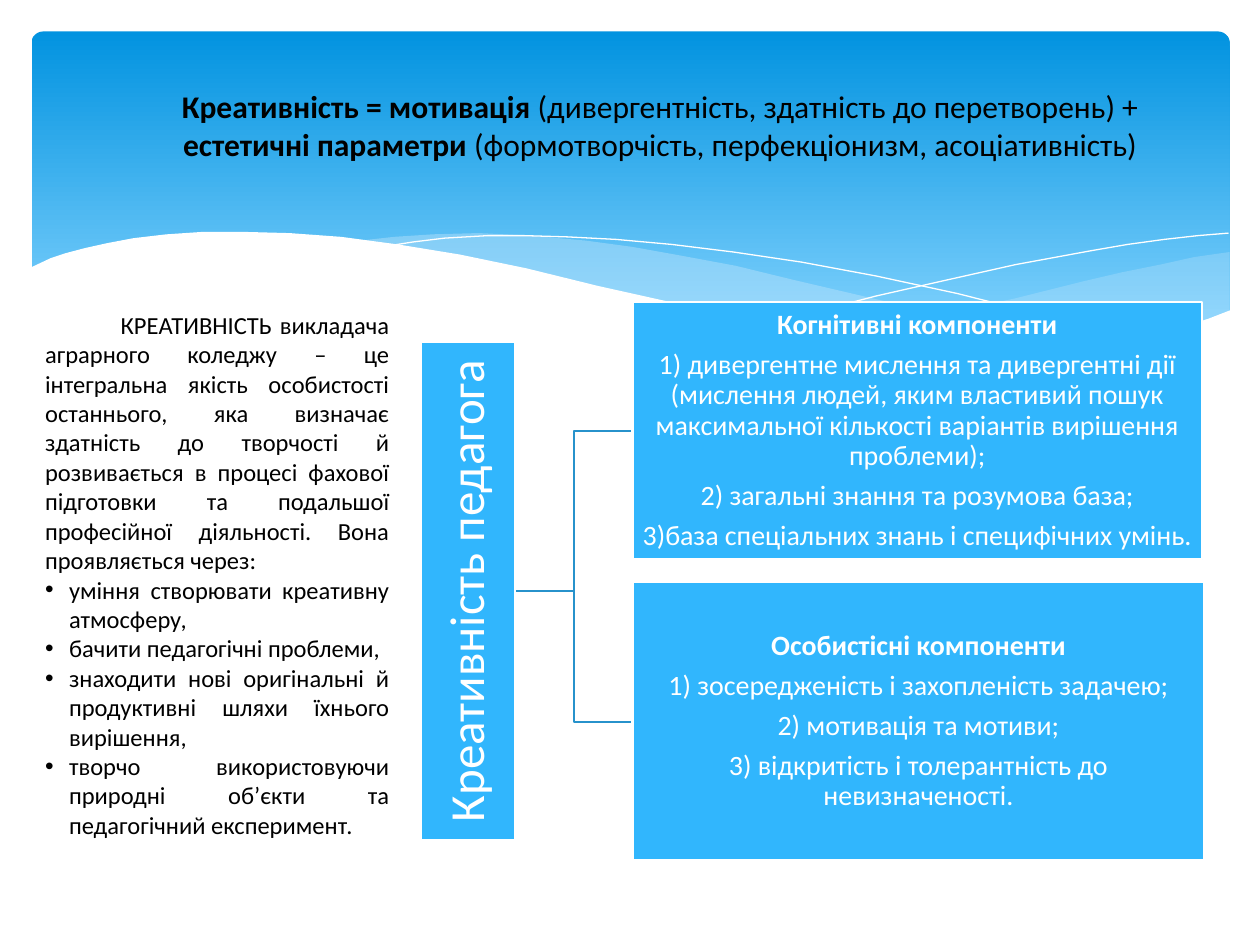
import pptx
import pptx.util
import pptx.dml.color
import pptx.enum.shapes
import pptx.enum.text
import pptx.oxml.ns
import lxml.etree
from dataclasses import dataclass

COLS, ROWS = 10, 7.5
ALIGN = pptx.enum.text.PP_ALIGN
ANCHOR = pptx.enum.text.MSO_ANCHOR
SHAPE = pptx.enum.shapes.MSO_SHAPE


@dataclass(frozen=True)
class Theme:
    """Colours, type sizes and font of the slide."""
    font: str = "Calibri"
    ink: str = "000000"
    white: str = "FFFFFF"
    panel: str = "31B6FD"
    link: str = "2792CB"
    deep: str = "0293E0"
    light: str = "83D3FE"
    mist: str = "C6E7FC"
    head: float = 18
    body: float = 14
    list: float = 16
    root: float = 28
    line: float = 1.25


THEME = Theme()

RIGHT = [(9.76, 2), (9.48, 2.04), (9.21, 2.1), (8.91, 2.16), (8.61, 2.23), (8.05, 2.37),
         (7.53, 2.48), (7.06, 2.57), (6.61, 2.65), (6.91, 2.69), (7.32, 2.74), (7.69, 2.77),
         (8.14, 2.78), (8.54, 2.76), (8.81, 2.73), (9.05, 2.69), (9.28, 2.63), (9.49, 2.57),
         (9.76, 2.47)]
MID = [(8.93, 2.73), (8.37, 2.65), (7.75, 2.54), (7.06, 2.4), (6.29, 2.22), (5.84, 2.11),
       (5.41, 2.03), (5.02, 1.96), (4.65, 1.91), (4.2, 1.87), (3.8, 1.85), (3.44, 1.86),
       (3.13, 1.88), (2.86, 1.91), (3.23, 1.96), (3.62, 2.03), (4.04, 2.11), (4.49, 2.22),
       (5.3, 2.4), (5.84, 2.52), (6.34, 2.61), (6.8, 2.68), (7.22, 2.74), (7.61, 2.77),
       (7.96, 2.78), (8.38, 2.78), (8.67, 2.76)]
FALL = [(3.09, 1.95), (3.28, 1.92), (3.53, 1.89), (3.87, 1.87), (4.16, 1.87), (4.5, 1.88),
        (4.89, 1.9), (5.33, 1.94), (5.82, 2), (6.36, 2.08), (6.95, 2.19), (7.6, 2.33),
        (8.31, 2.51), (9.07, 2.72)]
RISE = [(6.13, 2.57), (6.53, 2.46), (6.95, 2.35), (7.48, 2.23), (8.06, 2.1), (8.66, 1.99),
        (8.95, 1.94), (9.24, 1.9), (9.51, 1.87), (9.75, 1.85)]
FRONT = [(9.77, 2.46), (9.59, 2.53), (9.4, 2.59), (9.2, 2.65), (8.99, 2.69), (8.75, 2.73),
         (8.5, 2.75), (8.09, 2.77), (7.78, 2.76), (7.44, 2.74), (7.08, 2.7), (6.68, 2.65),
         (6.26, 2.58), (5.79, 2.5), (5.29, 2.39), (4.75, 2.27), (4.18, 2.13), (3.65, 2.02),
         (3.16, 1.94), (2.71, 1.88), (2.3, 1.85), (1.93, 1.84), (1.61, 1.84), (1.32, 1.86),
         (1.06, 1.89), (0.85, 1.93), (0.67, 1.97), (0.52, 2.01), (0.4, 2.05), (0.23, 2.13),
         (0.23, 3.29), (9.77, 3.29)]

HEAD = [("Креативність = мотивація ", True),
        ("(дивергентність, здатність до перетворень) + ", False),
        ("естетичні параметри ", True),
        ("(формотворчість, перфекціонизм, асоціативність)", False)]
INTRO = ("КРЕАТИВНІСТЬ викладача аграрного коледжу – це інтегральна якість особистості "
         "останнього, яка визначає здатність до творчості й розвивається в процесі фахової "
         "підготовки та подальшої професійної діяльності. Вона проявляється через:")
SKILLS = ["уміння створювати креативну атмосферу,",
          "бачити педагогічні проблеми,",
          "знаходити нові оригінальні й продуктивні шляхи їхнього вирішення,",
          "творчо використовуючи природні об’єкти та педагогічний експеримент."]
ROOT = "Креативність педагога"
MENTAL = ["Когнітивні компоненти",
          "1) дивергентне мислення та дивергентні дії (мислення людей, яким властивий пошук "
          "максимальної кількості варіантів вирішення проблеми);",
          "2) загальні знання та розумова база;",
          "3)база спеціальних знань і специфічних умінь."]
SELF = ["Особистісні компоненти",
        "1) зосередженість і захопленість задачею;",
        "2) мотивація та мотиви;",
        "3) відкритість і толерантність до невизначеності."]


def grid(*cells):
    """Turn grid cells into slide lengths."""
    return [pptx.util.Inches(cell) for cell in cells]


def tint(code):
    """Make a colour from its hex code."""
    return pptx.dml.color.RGBColor.from_string(code)


def add(node, tag, **attrs):
    """Append a drawing element to an XML node."""
    return lxml.etree.SubElement(node, pptx.oxml.ns.qn(tag), **attrs)


def style(para, size, color, align, bold=None):
    """Set the font and alignment of a paragraph."""
    para.alignment = align
    font = para.font
    font.name, font.size, font.bold = THEME.font, pptx.util.Pt(size), bold
    font.color.rgb = tint(color)


def wave(slide, box, points, fill=None, alpha=100):
    """Draw a filled wave, or a white hairline when there is no fill."""
    spots = [grid(box[0] + col, box[1] + row) for col, row in points]
    pen = slide.shapes.build_freeform(*spots[0], scale=1.0)
    pen.add_line_segments(spots[1:], close=fill is not None)
    shape = pen.convert_to_shape()
    shape.shadow.inherit = False
    if fill is None:
        shape.fill.background()
        shape.line.color.rgb = tint(THEME.white)
        shape.line.width = pptx.util.Pt(0)
        return
    shape.fill.solid()
    shape.fill.fore_color.rgb = tint(fill)
    shape.line.fill.background()
    if alpha < 100:
        node = next(shape.element.iter(pptx.oxml.ns.qn("a:srgbClr")))
        add(node, "a:alpha", val=str(alpha * 1000))


def banner(slide, box):
    """Draw the blue banner and its waves."""
    left, top, width, _ = box
    base = slide.shapes.add_shape(
        SHAPE.ROUNDED_RECTANGLE, *grid(left + 0.25, top + 0.25, width - 0.49, 2.7))
    base.adjustments[0] = 0.034
    base.shadow.inherit = False
    base.line.fill.background()
    base.fill.gradient()
    base.fill.gradient_angle = 270
    stops = zip(base.fill.gradient_stops, (0, 0.9), (THEME.deep, THEME.light))
    for stop, place, color in stops:
        stop.position, stop.color.rgb = place, tint(color)
    wave(slide, box, RIGHT, THEME.mist, 29)
    wave(slide, box, MID, THEME.mist, 40)
    wave(slide, box, FALL)
    wave(slide, box, RISE)
    wave(slide, box, FRONT, THEME.white)


def panel(slide, box, lines, size, inset, turn=0):
    """Draw a blue panel of centred lines, the first of several in bold."""
    shape = slide.shapes.add_shape(SHAPE.RECTANGLE, *grid(*box))
    shape.rotation = turn
    shape.shadow.inherit = False
    shape.fill.solid()
    shape.fill.fore_color.rgb = tint(THEME.panel)
    shape.line.color.rgb = tint(THEME.white)
    shape.line.width = pptx.util.Pt(THEME.line)
    frame = shape.text_frame
    frame.word_wrap, frame.vertical_anchor = True, ANCHOR.MIDDLE
    frame.margin_left, frame.margin_top, frame.margin_right, frame.margin_bottom = grid(*[inset] * 4)
    for num, line in enumerate(lines):
        para = frame.add_paragraph() if num else frame.paragraphs[0]
        para.text = line
        para.line_spacing = 0.9
        para.space_after = pptx.util.Pt(size * 0.35)
        style(para, size, THEME.white, ALIGN.CENTER, num == 0 and len(lines) > 1)


def chart(slide, box):
    """Draw the root panel, its two branches and their links."""
    left, top, width, height = box
    mid = top + 2.29
    fork = left + 1.68
    for row in (top + 3.33, top + 1.02):
        link = slide.shapes.add_connector(
            pptx.enum.shapes.MSO_CONNECTOR.ELBOW, *grid(left + 0.75, mid, fork, row))
        link.line.color.rgb = tint(THEME.link)
        link.line.width = pptx.util.Pt(THEME.line)
        add(link.element.spPr, "a:effectLst")
    long, thin = 3.96, 0.75
    panel(slide, (left + (thin - long) / 2, mid - thin / 2, long, thin),
          [ROOT], THEME.root, 0.02, 270)
    panel(slide, (fork, top, width - 1.7, 2.04), MENTAL, THEME.list, 0.01)
    panel(slide, (fork, top + 2.22, width - 1.68, height - 2.22), SELF, THEME.list, 0.01)


def title(slide, box):
    """Place the heading above the banner."""
    shape = slide.shapes.title
    shape.left, shape.top, shape.width, shape.height = grid(*box)
    shape.element.getparent().append(shape.element)
    frame = shape.text_frame
    frame.word_wrap, frame.vertical_anchor = True, ANCHOR.TOP
    frame.auto_size = pptx.enum.text.MSO_AUTO_SIZE.NONE
    para = frame.paragraphs[0]
    for words, bold in HEAD:
        run = para.add_run()
        run.text, run.font.bold = words, bold
    style(para, THEME.head, THEME.ink, ALIGN.CENTER)


def notes(slide, box):
    """Place the definition and its bullet list."""
    frame = slide.shapes.add_textbox(*grid(*box)).text_frame
    frame.word_wrap = True
    for num, line in enumerate([INTRO] + SKILLS):
        para = frame.add_paragraph() if num else frame.paragraphs[0]
        para.text = line
        props = para._p.get_or_add_pPr()
        margin, indent = grid(0.19, -0.19) if num else grid(0, 0.6)
        props.set("marL", str(margin))
        props.set("indent", str(indent))
        if num:
            add(props, "a:buFont", typeface="Arial")
            add(props, "a:buChar", char="•")
        style(para, THEME.body, THEME.ink, ALIGN.JUSTIFY)


def main():
    """Build the slide and save it."""
    deck = pptx.Presentation()
    deck.slide_width, deck.slide_height = grid(COLS, ROWS)
    slide = deck.slides.add_slide(deck.slide_layouts[5])
    banner(slide, (0, 0, COLS, 3.3))
    chart(slide, (3.34, 2.4, 6.22, 4.43))
    title(slide, (0.91, 0.64, 8.66, 0.71))
    notes(slide, (0.26, 2.41, 2.93, 4.64))
    deck.save("out.pptx")


if __name__ == "__main__":
    main()
